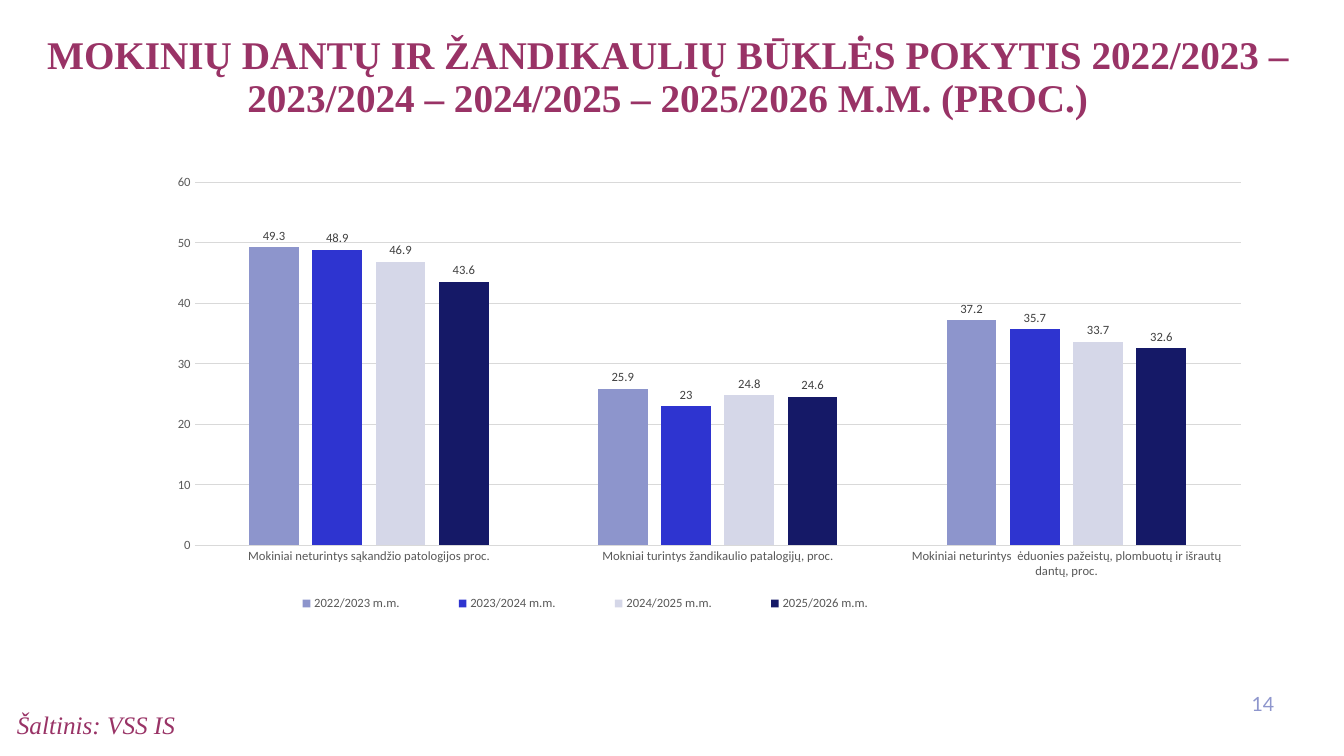
from lxml.etree import SubElement
from pptx import Presentation
from pptx.chart.data import CategoryChartData
from pptx.dml.color import RGBColor
from pptx.enum.chart import XL_CHART_TYPE, XL_LABEL_POSITION, XL_LEGEND_POSITION, XL_TICK_MARK
from pptx.enum.text import MSO_ANCHOR, PP_ALIGN
from pptx.oxml.ns import qn
from pptx.util import Inches, Pt

TITLE = "MOKINIŲ DANTŲ IR ŽANDIKAULIŲ BŪKLĖS POKYTIS 2022/2023 – 2023/2024 – 2024/2025 – 2025/2026 M.M. (PROC.)"
SOURCE = "Šaltinis: VSS IS"
PAGE_NUMBER = "14"
CATEGORIES = [
    "Mokiniai neturintys sąkandžio patologijos proc.",
    "Mokniai turintys žandikaulio patalogijų, proc.",
    "Mokiniai neturintys  ėduonies pažeistų, plombuotų ir išrautų dantų, proc.",
]
SERIES = [
    ("2022/2023 m.m.", (49.3, 25.9, 37.2), "periwinkle"),
    ("2023/2024 m.m.", (48.9, 23, 35.7), "blue"),
    ("2024/2025 m.m.", (46.9, 24.8, 33.7), "lavender"),
    ("2025/2026 m.m.", (43.6, 24.6, 32.6), "navy"),
]
COLORS = {
    "plum": "993366",
    "page": "8E96CD",
    "periwinkle": "8D95CC",
    "blue": "2E34D0",
    "lavender": "D5D7E8",
    "navy": "151967",
    "axis": "595959",
    "label": "404040",
    "grid": "D9D9D9",
    "black": "000000",
}
BOXES = {
    "title": (-9, 31, 1353, 120),
    "source": (7, 704, 635, 38),
    "page": (1232, 684, 52, 40),
    "chart": (148, 127, 1107, 518),
}
PLOT_LAYOUT = (0.042, 0.107, 0.945, 0.701)
LEGEND_LAYOUT = (0.09, 0.89, 0.61, 0.06)
PX = Inches(1) / 100.8


def box(name):
    return [round(length * PX) for length in BOXES[name]]


def color(name):
    return RGBColor.from_string(COLORS[name])


def style_font(font, family, size, color_name):
    font.name = family
    font.size = Pt(size)
    font.color.rgb = color(color_name)


def write(shape, text, family, size, color_name, alignment, anchor):
    frame = shape.text_frame
    frame.word_wrap = True
    frame.vertical_anchor = anchor
    paragraph = frame.paragraphs[0]
    paragraph.alignment = alignment
    run = paragraph.add_run()
    run.text = text
    style_font(run.font, family, size, color_name)
    return paragraph, run


def style_line(line):
    line.color.rgb = color("grid")
    line.width = Pt(0.75)


def set_layout(parent, after, fractions, inner=False):
    for old in parent.findall(qn("c:layout")):
        parent.remove(old)
    layout = parent.makeelement(qn("c:layout"))
    if after is None:
        parent.insert(0, layout)
    else:
        after.addnext(layout)
    manual = SubElement(layout, qn("c:manualLayout"))
    settings = [("layoutTarget", "inner")] if inner else []
    settings += [("xMode", "edge"), ("yMode", "edge")]
    settings += zip("xywh", fractions)
    for tag, value in settings:
        SubElement(manual, qn(f"c:{tag}")).set("val", str(value))


def add_chart(slide):
    data = CategoryChartData(number_format="General")
    data.categories = CATEGORIES
    for name, values, _ in SERIES:
        data.add_series(name, values)
    chart = slide.shapes.add_chart(XL_CHART_TYPE.COLUMN_CLUSTERED, *box("chart"), data).chart
    chart.has_title = False
    style_font(chart.font, "Calibri", 10, "black")

    plot = chart.plots[0]
    plot.gap_width = 219
    plot.overlap = -27
    plot.vary_by_categories = False
    for series, (_, _, color_name) in zip(plot.series, SERIES):
        series.format.fill.solid()
        series.format.fill.fore_color.rgb = color(color_name)
        labels = series.data_labels
        labels.show_value = True
        labels.position = XL_LABEL_POSITION.OUTSIDE_END
        style_font(labels.font, "Calibri", 9, "label")

    for axis in (chart.category_axis, chart.value_axis):
        axis.major_tick_mark = XL_TICK_MARK.NONE
        axis.minor_tick_mark = XL_TICK_MARK.NONE
        style_font(axis.tick_labels.font, "Calibri", 9, "axis")
    style_line(chart.category_axis.format.line)
    value_axis = chart.value_axis
    value_axis.minimum_scale, value_axis.maximum_scale, value_axis.major_unit = 0, 60, 10
    value_axis.format.line.fill.background()
    value_axis.has_major_gridlines = True
    style_line(value_axis.major_gridlines.format.line)

    chart.has_legend = True
    legend = chart.legend
    legend.position = XL_LEGEND_POSITION.BOTTOM
    legend.include_in_layout = False
    style_font(legend.font, "Calibri", 9, "axis")

    chart_space = chart.element
    set_layout(chart_space.find(".//" + qn("c:plotArea")), None, PLOT_LAYOUT, inner=True)
    legend_element = chart_space.find(".//" + qn("c:legend"))
    set_layout(legend_element, legend_element.find(qn("c:legendPos")), LEGEND_LAYOUT)


def main():
    presentation = Presentation()
    presentation.slide_width = Inches(13.33)
    presentation.slide_height = Inches(7.5)
    slide = presentation.slides.add_slide(presentation.slide_layouts[5])

    title = slide.shapes.title
    title.left, title.top, title.width, title.height = box("title")
    paragraph, run = write(title, TITLE, "Times New Roman", 28, "plum", PP_ALIGN.CENTER, MSO_ANCHOR.TOP)
    paragraph.line_spacing = 0.9
    run.font.bold = True

    source = slide.shapes.add_textbox(*box("source"))
    _, run = write(source, SOURCE, "Times New Roman", 18, "plum", PP_ALIGN.LEFT, MSO_ANCHOR.TOP)
    run.font.italic = True

    page = slide.shapes.add_textbox(*box("page"))
    write(page, PAGE_NUMBER, "Lato", 14, "page", PP_ALIGN.RIGHT, MSO_ANCHOR.MIDDLE)

    add_chart(slide)
    presentation.save("out.pptx")


if __name__ == "__main__":
    main()
